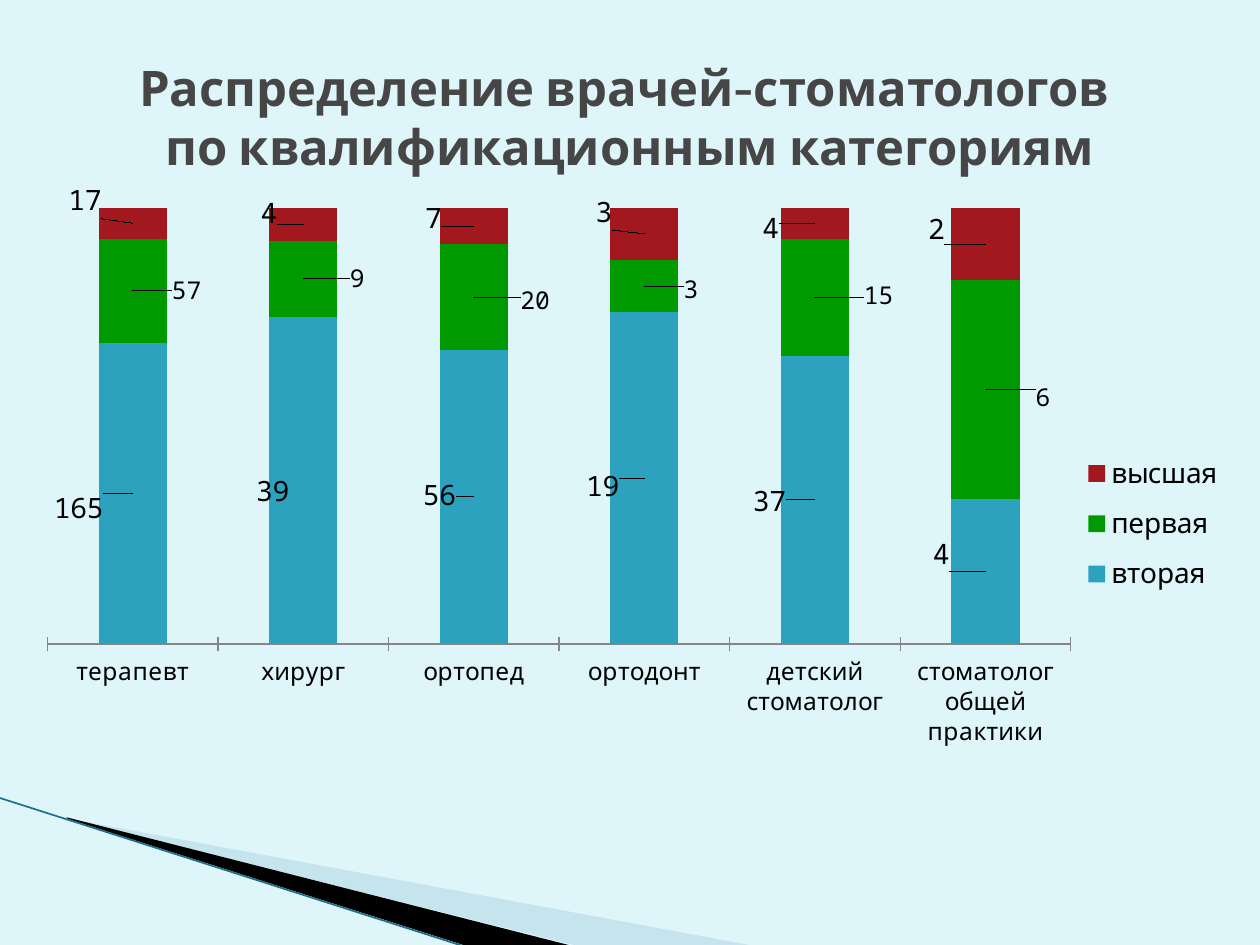
import pptx
import pptx.chart.data
import pptx.enum.chart
import pptx.enum.text
import pptx.oxml
import pptx.oxml.ns
import pptx.util
from pptx.dml.color import RGBColor

Pt = pptx.util.Pt

BACKGROUND = RGBColor(0xDE, 0xF5, 0xFA)
PALE_BLUE = RGBColor(0xA0, 0xCB, 0xDC)
BLACK = RGBColor(0, 0, 0)
LINE_TEAL = RGBColor(0x1C, 0x70, 0x8B)
TITLE_GRAY = RGBColor(0x46, 0x46, 0x46)
AXIS_GRAY = RGBColor(0x86, 0x86, 0x86)
BLUE = RGBColor(0x2D, 0xA2, 0xBF)
GREEN = RGBColor(0x00, 0x99, 0x00)
RED = RGBColor(0xA3, 0x17, 0x1E)

CATEGORIES = ["терапевт", "хирург", "ортопед", "ортодонт",
              "детский стоматолог", "стоматолог общей практики"]

# Name, values, colour, label size, label shifts in percent of the chart
SERIES = [
    ("вторая", (165, 39, 56, 19, 37, 4), BLUE, 16,
     [(-4.4, 2), (-2.5, 1.4), (-2.8, -0.3), (-3.4, 1.1), (-3.7, 0.1), (-3.6, -2.3)]),
    ("первая", (57, 9, 20, 3, 15, 6), GREEN, 14,
     [(4.4, 0), (4.4, -0.1), (5, 0.5), (3.8, 0.4), (5.2, -0.3), (4.7, 1.1)]),
    ("высшая", (17, 4, 7, 3, 4, 2), RED, 16,
     [(-3.9, -3.1), (-2.8, -1.5), (-3.3, -1.1), (-3.3, -3), (-3.6, 0.7), (-4, -2)]),
]


def layout_xml(x, y, w=None, h=None, inner=False):
    """Manual chart layout: a shift, or a frame when a size is given."""
    parts = []
    if inner:
        parts.append('<c:layoutTarget val="inner"/>')
    if w is not None:
        parts.append('<c:xMode val="edge"/><c:yMode val="edge"/>')
    for tag, value in zip("xywh", (x, y, w, h)):
        if value is not None:
            parts.append(f'<c:{tag} val="{value:.3f}"/>')
    ns = pptx.oxml.ns.nsdecls("c")
    return pptx.oxml.parse_xml(
        f'<c:layout {ns}><c:manualLayout>{"".join(parts)}</c:manualLayout></c:layout>')


def put_layout(parent, layout, after=None):
    for old in parent.findall(pptx.oxml.ns.qn("c:layout")):
        parent.remove(old)
    if after is None:
        parent.insert(0, layout)
    else:
        parent.find(pptx.oxml.ns.qn(after)).addnext(layout)


class SlideBuilder:
    text_font = "Cabin"
    number_font = "Noto Sans Mono"

    def __init__(self, s):
        self.s = s

    def background(self, color):
        fill = self.s.background.fill
        fill.solid()
        fill.fore_color.rgb = color

    def outline(self, points, color, alpha=None):
        fb = self.s.shapes.build_freeform(*points[0], scale=Pt(1))
        fb.add_line_segments(points[1:], close=True)
        sp = fb.convert_to_shape()
        sp.shadow.inherit = False
        sp.fill.solid()
        sp.fill.fore_color.rgb = color
        sp.line.fill.background()
        if alpha is not None:
            clr = sp.fill._xPr.find(".//" + pptx.oxml.ns.qn("a:srgbClr"))
            ns = pptx.oxml.ns.nsdecls("a")
            clr.append(pptx.oxml.parse_xml(f'<a:alpha {ns} val="{alpha * 1000}"/>'))

    def line(self, x1, y1, x2, y2, color, width):
        cx = self.s.shapes.add_connector(1, Pt(x1), Pt(y1), Pt(x2), Pt(y2))
        cx.line.color.rgb = color
        cx.line.width = Pt(width)
        ns = pptx.oxml.ns.nsdecls("a")
        cx._element.spPr.append(pptx.oxml.parse_xml(f"<a:effectLst {ns}/>"))

    def font(self, font, size, name, color=BLACK, bold=False):
        font.size = Pt(size)
        font.name = name
        font.bold = bold
        font.color.rgb = color

    def title(self, x, y, w, h, text):
        tf = self.s.shapes.add_textbox(Pt(x), Pt(y), Pt(w), Pt(h)).text_frame
        tf.word_wrap = True
        tf.vertical_anchor = pptx.enum.text.MSO_ANCHOR.MIDDLE
        p = tf.paragraphs[0]
        p.text = text
        p.alignment = pptx.enum.text.PP_ALIGN.CENTER
        self.font(p.font, 28, self.text_font, TITLE_GRAY, True)

    def chart(self, x, y, w, h):
        data = pptx.chart.data.CategoryChartData()
        data.categories = CATEGORIES
        for name, values, *_ in SERIES:
            data.add_series(name, values)
        chart = self.s.shapes.add_chart(
            pptx.enum.chart.XL_CHART_TYPE.COLUMN_STACKED_100,
            Pt(x), Pt(y), Pt(w), Pt(h), data).chart
        chart.has_title = False
        self.font(chart.font, 18, self.number_font)
        plot = chart.plots[0]
        plot.overlap = 100
        plot.gap_width = 150
        plot.vary_by_categories = False
        put_layout(plot._element.getparent(),
                   layout_xml(0.013, 0.039, 0.833, 0.589, inner=True))

        # Axes
        axis = chart.category_axis
        axis.major_tick_mark = pptx.enum.chart.XL_TICK_MARK.CROSS
        axis.format.line.color.rgb = AXIS_GRAY
        self.font(axis.tick_labels.font, 14, self.text_font)
        chart.value_axis.has_major_gridlines = False
        chart.value_axis.visible = False

        # Legend
        chart.has_legend = True
        legend = chart.legend
        legend.position = pptx.enum.chart.XL_LEGEND_POSITION.RIGHT
        legend.include_in_layout = False
        self.font(legend.font, 16, self.text_font)
        put_layout(legend._element, layout_xml(0.853, 0.352, 0.12, 0.227), "c:legendPos")

        # Series and shifted value labels
        for ser, (_, _, color, size, shifts) in zip(plot.series, SERIES):
            ser.format.fill.solid()
            ser.format.fill.fore_color.rgb = color
            labels = ser.data_labels
            labels.show_value = True
            self.font(labels.font, size, self.number_font)
            for i, (dx, dy) in enumerate(shifts):
                label = ser.points[i].data_label
                label.position = pptx.enum.chart.XL_LABEL_POSITION.CENTER
                self.font(label.font, size, self.number_font)
            for dlbl, (dx, dy) in zip(
                    labels._element.findall(pptx.oxml.ns.qn("c:dLbl")), shifts):
                put_layout(dlbl, layout_xml(dx / 100, dy / 100), "c:idx")


def main():
    prs = pptx.Presentation()
    prs.slide_width, prs.slide_height = Pt(720), Pt(540)
    b = SlideBuilder(prs.slides.add_slide(prs.slide_layouts[6]))

    # Background and corner wedges
    b.background(BACKGROUND)
    b.outline([(39.6, 468.5), (428.4, 540.5), (328.3, 540.5), (39.6, 468)], PALE_BLUE, 40)
    b.outline([(38.2, 467.3), (329, 540.7), (267.8, 541.4), (38.9, 468)], BLACK)
    b.line(-0.7, 455.8, 267.1, 541.4, LINE_TEAL, 0.95)

    # Chart and title
    b.chart(18, 102.2, 702, 423.4)
    b.title(36, 21.6, 648, 90,
            "Распределение врачей-стоматологов \vпо квалификационным категориям")

    prs.save("out.pptx")


if __name__ == "__main__":
    main()
